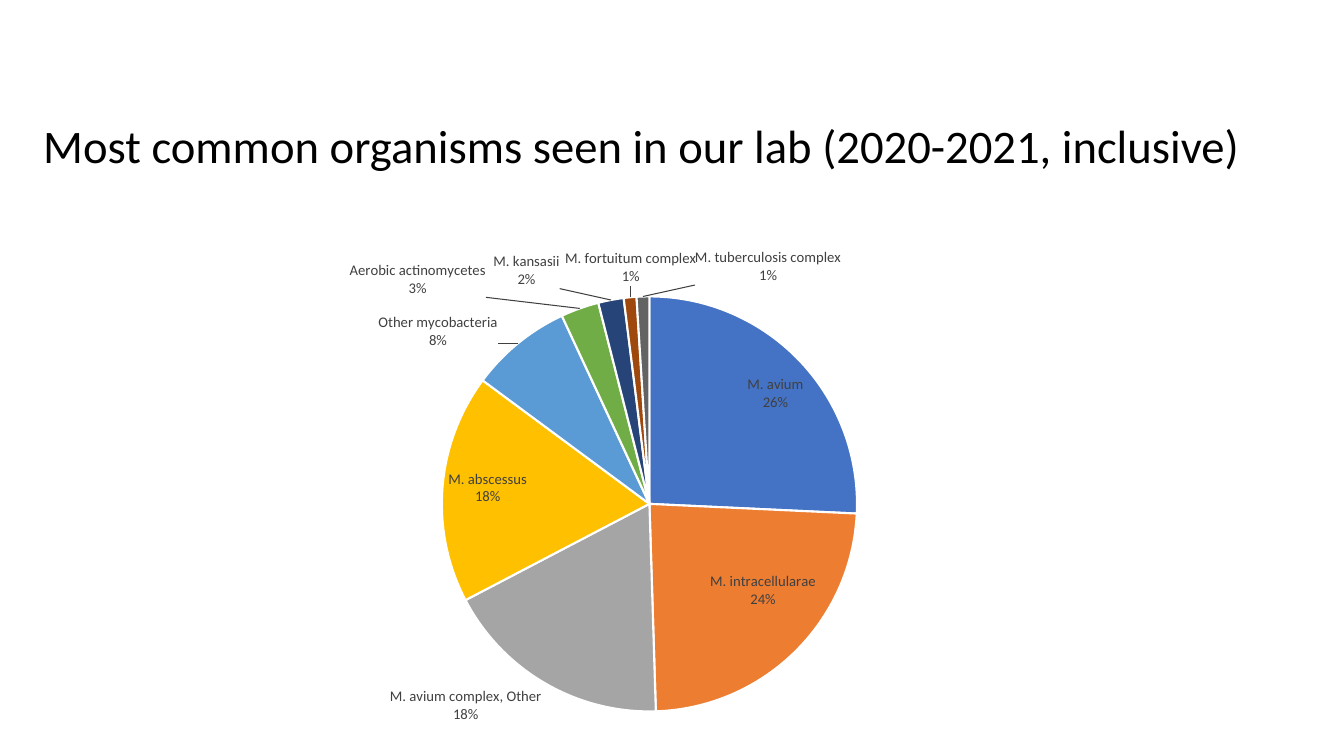
from lxml import etree
from pptx import Presentation
from pptx import util as u
from pptx.chart.data import CategoryChartData
from pptx.dml.color import RGBColor
from pptx.enum import chart as charts, text
from pptx.oxml.ns import qn

TITLE = "Most common organisms seen in our lab (2020-2021, inclusive)"
FONT = "Calibri"
COLORS = {"title": "000000", "label": "404040", "border": "FFFFFF", "leader": "404040"}
INSIDE = charts.XL_LABEL_POSITION.INSIDE_END
OUTSIDE = charts.XL_LABEL_POSITION.OUTSIDE_END
ORGANISMS = [
    ("M. avium", 26, "4472C4", INSIDE, (0.01, 0.02)),
    ("M. intracellularae", 24, "ED7D31", INSIDE, (0.03, -0.07)),
    ("M. avium complex, Other", 18, "A5A5A5", OUTSIDE, None),
    ("M. abscessus", 18, "FFC000", INSIDE, None),
    ("Other mycobacteria", 8, "5B9BD5", OUTSIDE, (-0.02, 0.02)),
    ("Aerobic actinomycetes", 3, "70AD47", OUTSIDE, (-0.11, -0.01)),
    ("M. kansasii", 2, "264478", OUTSIDE, (-0.06, -0.01)),
    ("M. fortuitum complex", 1, "9E480E", OUTSIDE, (0.08, -0.01)),
    ("M. tuberculosis complex", 1, "636363", OUTSIDE, (0.15, -0.01)),
]
PLOT_LAYOUT = {
    "layoutTarget": "inner", "xMode": "edge", "yMode": "edge",
    "x": 0.227, "y": 0.214, "w": 0.533, "h": 0.746,
}


def style_font(font, size, color):
    font.name = FONT
    font.size = u.Pt(size)
    font.color.rgb = RGBColor.from_string(COLORS[color])


def make_layout(settings):
    layout = etree.Element(qn("c:layout"))
    manual = etree.SubElement(layout, qn("c:manualLayout"))
    for name, value in settings.items():
        etree.SubElement(manual, qn(f"c:{name}")).set("val", str(value))
    return layout


def show_name_and_percent(label):
    for name, value in (("showVal", "0"), ("showCatName", "1"), ("showPercent", "1")):
        label.find(qn(f"c:{name}")).set("val", value)
    separator = etree.Element(qn("c:separator"))
    separator.text = "\n"
    label.find(qn("c:showBubbleSize")).addnext(separator)


def add_title(slide):
    box = slide.shapes.add_textbox(u.Inches(0.33), u.Inches(1.17), u.Inches(12.5), u.Inches(0.98))
    frame = box.text_frame
    frame.word_wrap = True
    frame.vertical_anchor = text.MSO_ANCHOR.TOP
    paragraph = frame.paragraphs[0]
    paragraph.line_spacing = 0.9
    run = paragraph.add_run()
    run.text = TITLE
    style_font(run.font, 33.3, "title")


def add_pie(slide):
    data = CategoryChartData()
    data.categories = [organism[0] for organism in ORGANISMS]
    data.add_series("Series 1", [organism[1] for organism in ORGANISMS])
    chart = slide.shapes.add_chart(
        charts.XL_CHART_TYPE.PIE, u.Inches(2.35), u.Inches(1.76),
        u.Inches(8.29), u.Inches(5.52), data).chart
    chart.has_title = False
    chart.has_legend = False
    style_font(chart.font, 10.5, "title")
    plot = chart.plots[0]
    plot.vary_by_categories = True
    series = plot.series[0]

    labels = series.data_labels
    labels.number_format = "0%"
    labels.number_format_is_linked = False
    style_font(labels.font, 10.5, "label")

    for index, (name, value, color, position, offset) in enumerate(ORGANISMS):
        point = series.points[index]
        point.format.fill.solid()
        point.format.fill.fore_color.rgb = RGBColor.from_string(color)
        point.format.line.color.rgb = RGBColor.from_string(COLORS["border"])
        point.format.line.width = u.Pt(1.5)
        style_font(point.data_label.font, 10.5, "label")
        point.data_label.position = position

    pie = plot._element
    group = pie.find(f"{qn('c:ser')}/{qn('c:dLbls')}")
    show_name_and_percent(group)
    for label, organism in zip(group.findall(qn("c:dLbl")), ORGANISMS):
        show_name_and_percent(label)
        number_format = etree.Element(qn("c:numFmt"), formatCode="0%", sourceLinked="0")
        label.find(qn("c:idx")).addnext(number_format)
        if organism[4]:
            number_format.addprevious(make_layout(dict(zip("xy", organism[4]))))

    leaders = etree.Element(qn("c:leaderLines"))
    properties = etree.SubElement(leaders, qn("c:spPr"))
    line = etree.SubElement(properties, qn("a:ln"), w="9525")
    fill = etree.SubElement(line, qn("a:solidFill"))
    etree.SubElement(fill, qn("a:srgbClr"), val=COLORS["leader"])
    group.find(qn("c:showLeaderLines")).addnext(leaders)

    plot_area = pie.getparent()
    for layout in plot_area.findall(qn("c:layout")):
        plot_area.remove(layout)
    plot_area.insert(0, make_layout(PLOT_LAYOUT))


def main():
    presentation = Presentation()
    presentation.slide_width = u.Inches(13.33)
    presentation.slide_height = u.Inches(7.5)
    slide = presentation.slides.add_slide(presentation.slide_layouts[6])
    add_title(slide)
    add_pie(slide)
    presentation.save("out.pptx")


if __name__ == "__main__":
    main()
